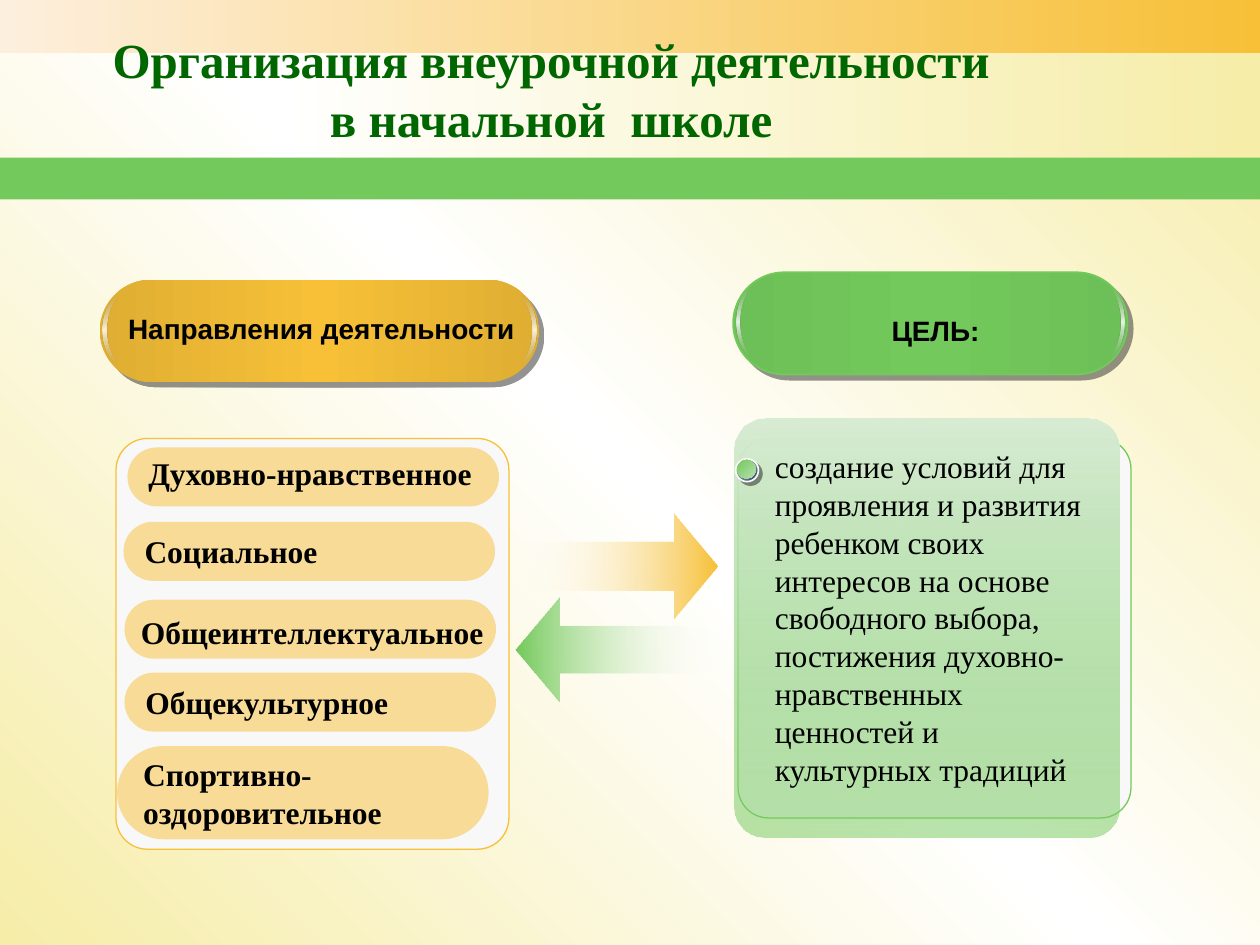
from lxml.etree import SubElement
from pptx import Presentation
from pptx.dml.color import RGBColor
from pptx.enum.shapes import MSO_SHAPE
from pptx.enum.text import MSO_ANCHOR, PP_ALIGN
from pptx.oxml.ns import qn
from pptx.util import Cm, Pt

GOLD, GREEN, CREAM, WHITE, PANEL = "F7C037", "73C95B", "F6EDA8", "FFFFFF", "F8F8F8"
SERIF, SANS = "Times New Roman", "Arial"

TITLE = "Организация внеурочной деятельности\vв начальной  школе"
GOAL = ("создание условий для проявления и развития ребенком своих интересов "
        "на основе свободного выбора, постижения духовно-нравственных ценностей "
        "и культурных традиций")

# Pill box, moon width, edge colour, middle colour, outline, heading, heading box
HEADINGS = [
    ((2.01, 5.64, 8.86, 2.06), 0.41, "DFAE32", GOLD, None,
     "Направления деятельности", (2.01, 6.15, 8.94, 0.94)),
    ((14.78, 5.49, 7.95, 2.06), 0.36, "6DBF57", GREEN, GREEN,
     "ЦЕЛЬ:", (15.75, 6.2, 6.22, 0.94)),
]
# Left, top, height, text, label box when the label stands apart from the pill
DIRECTIONS = [
    (2.57, 9.02, 1.19, "Духовно-нравственное", (2.74, 9.12, 7.11, 0.94)),
    (2.49, 10.52, 1.19, "Социальное", None),
    (2.51, 12.09, 1.19, "Общеинтеллектуальное", (2.59, 12.32, 7.49, 0.94)),
    (2.51, 13.56, 1.19, "Общекультурное", None),
    (2.36, 15.04, 1.88, "Спортивно-\nоздоровительное", None),
]
PILL_WIDTH = 7.49
MOON_STOPS = [(0, "B6B6B6", 0), (50, WHITE, 84), (100, "B6B6B6", 0)]


def color(value):
    return RGBColor.from_string(value)


def add_color(parent, value, alpha=100):
    element = SubElement(parent, qn("a:srgbClr"), val=value)
    if alpha < 100:
        SubElement(element, qn("a:alpha"), val=str(alpha * 1000))
    return element


def set_gradient(properties, stops, angle):
    """Swap the noFill of a shape or background for a gradient of (position, colour[, alpha])."""
    gradient = properties.makeelement(qn("a:gradFill"), {"rotWithShape": "1"})
    stop_list = SubElement(gradient, qn("a:gsLst"))
    for position, *shade in stops:
        add_color(SubElement(stop_list, qn("a:gs"), pos=str(position * 1000)), *shade)
    SubElement(gradient, qn("a:lin"), ang=str(angle * 60000), scaled="0")
    properties.replace(properties.find(qn("a:noFill")), gradient)


def add_shadow(shape, value, distance):
    effects = shape.element.spPr.find(qn("a:effectLst"))
    shadow = SubElement(effects, qn("a:outerShdw"), dist=str(Pt(distance)),
                        dir=str(45 * 60000), algn="ctr", rotWithShape="0")
    add_color(shadow, value, 50)


def add_shape(slide, kind, box, fill=None, alpha=100, stops=None, angle=0,
              line=None, line_width=0.75, adjustments=()):
    shape = slide.shapes.add_shape(kind, *map(Cm, box))
    shape.shadow.inherit = False
    for index, value in enumerate(adjustments):
        shape.adjustments[index] = value
    if stops:
        shape.fill.background()
        set_gradient(shape.element.spPr, stops, angle)
    else:
        shape.fill.solid()
        shape.fill.fore_color.rgb = color(fill)
        if alpha < 100:
            fill_color = shape.element.spPr.find(qn("a:solidFill"))[0]
            SubElement(fill_color, qn("a:alpha"), val=str(alpha * 1000))
    if line:
        shape.line.color.rgb = color(line)
        shape.line.width = Pt(line_width)
    else:
        shape.line.fill.background()
    return shape


def write_text(shape, text, size=18, font=SERIF, ink="000000", bold=False,
               align=PP_ALIGN.LEFT, anchor=MSO_ANCHOR.TOP, wrap=True, spacing=None):
    frame = shape.text_frame
    frame.word_wrap = wrap
    frame.vertical_anchor = anchor
    frame.text = text
    for paragraph in frame.paragraphs:
        paragraph.alignment = align
        if spacing:
            paragraph.line_spacing = spacing
        for run in paragraph.runs:
            run.font.size = Pt(size)
            run.font.name = font
            run.font.bold = bold
            run.font.color.rgb = color(ink)


def add_text(slide, box, text, **style):
    write_text(slide.shapes.add_textbox(*map(Cm, box)), text, **style)


def add_heading(slide, box, moon_width, edge, middle, outline):
    """Draw a shaded pill with a glossy moon at each end."""
    left, top, width, height = box
    pill = add_shape(slide, MSO_SHAPE.ROUNDED_RECTANGLE, box, line=outline, line_width=1,
                     stops=[(0, edge), (50, middle), (100, edge)], adjustments=[0.5])
    add_shadow(pill, "292929", 4.2)
    inset = 0.06
    for flipped in (True, False):
        moon_left = left + width - inset - moon_width if flipped else left + inset
        moon = add_shape(slide, MSO_SHAPE.MOON, (moon_left, top + 0.3, moon_width, 1.42),
                         stops=MOON_STOPS, angle=90, adjustments=[0.22])
        if flipped:
            moon.element.spPr.find(qn("a:xfrm")).set("flipH", "1")


def main():
    presentation = Presentation()
    presentation.slide_width, presentation.slide_height = Cm(25.4), Cm(19.05)
    slide = presentation.slides.add_slide(presentation.slide_layouts[6])
    slide.background.fill.background()
    set_gradient(slide.element.find(".//" + qn("p:bgPr")),
                 [(0, CREAM), (50, WHITE), (100, CREAM)], 315)

    rectangle, rounded = MSO_SHAPE.RECTANGLE, MSO_SHAPE.ROUNDED_RECTANGLE
    add_shape(slide, rectangle, (0, 0, 25.4, 1.07), stops=[(0, "FDEFDD"), (100, GOLD)])
    add_shape(slide, rectangle, (5.51, 1.07, 19.89, 2.11), stops=[(0, WHITE), (100, CREAM)])
    add_shape(slide, rectangle, (0, 3.18, 25.4, 0.84), fill=GREEN)
    add_text(slide, (0.71, 0.74, 20.8, 2.08), TITLE, size=28, ink="006600", bold=True,
             align=PP_ALIGN.CENTER, anchor=MSO_ANCHOR.MIDDLE)

    add_shape(slide, rounded, (14.88, 8.84, 7.92, 7.65), fill=PANEL, line=GREEN,
              adjustments=[0.08])
    add_shape(slide, rounded, (14.81, 8.43, 7.75, 8.46), angle=90, adjustments=[0.08],
              stops=[(0, "D8ECD4"), (100, GREEN, 50)])
    add_shape(slide, rounded, (2.34, 8.84, 7.92, 8.28), fill=PANEL, line=GOLD,
              adjustments=[0.08])

    for *pill, heading, heading_box in HEADINGS:
        add_heading(slide, *pill)
        add_text(slide, heading_box, heading, size=16, font=SANS, bold=True,
                 align=PP_ALIGN.CENTER)

    add_shape(slide, MSO_SHAPE.RIGHT_ARROW, (10.46, 10.36, 4.01, 2.11),
              stops=[(0, WHITE, 0), (100, GOLD)], adjustments=[0.46, 0.42])
    add_shape(slide, MSO_SHAPE.LEFT_ARROW, (10.39, 12.04, 4.01, 2.11),
              stops=[(0, GREEN), (100, WHITE, 0)], adjustments=[0.46, 0.42])

    add_text(slide, (15.37, 8.89, 6.99, 7.19), GOAL)
    bullet = add_shape(slide, MSO_SHAPE.OVAL, (14.83, 9.25, 0.46, 0.46), line=PANEL,
                       line_width=1, stops=[(0, "DDDDE1"), (100, "223864")], angle=45)
    add_shadow(bullet, "1C1C1C", 2.8)
    add_shape(slide, MSO_SHAPE.OVAL, (14.86, 9.27, 0.38, 0.38), angle=45,
              stops=[(0, GREEN), (100, "B7DFB0")])

    for left, top, height, text, label_box in DIRECTIONS:
        pill = add_shape(slide, rounded, (left, top, PILL_WIDTH, height), fill=GOLD,
                         alpha=50, adjustments=[0.5])
        if label_box:
            add_text(slide, label_box, text, bold=True, wrap=False, spacing=0.9)
        else:
            write_text(pill, text, bold=True, wrap=False, anchor=MSO_ANCHOR.MIDDLE)

    presentation.save("out.pptx")


if __name__ == "__main__":
    main()
